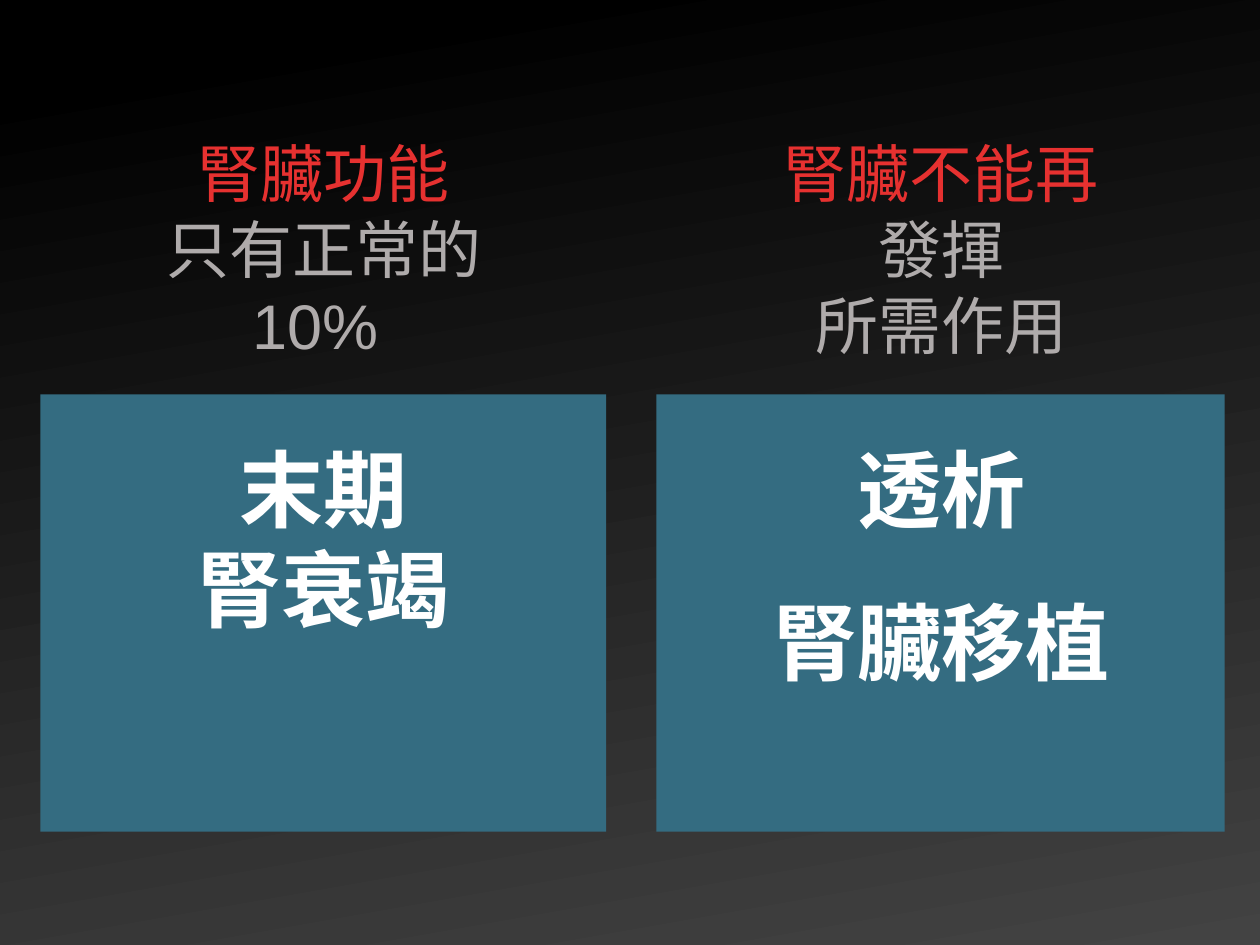
from pptx import Presentation
from pptx import util as u
from pptx.dml.color import RGBColor
from pptx.enum import shapes, text

FONT = "Arial"
RED, GREY, WHITE, TEAL = "E63130", "AFABAB", "FFFFFF", "346C81"


def color(value):
    return RGBColor.from_string(value)


def set_background(slide):
    fill = slide.background.fill
    fill.gradient()
    fill.gradient_angle = 280  # counter-clockwise, so 80 degrees clockwise
    for stop, position, shade in zip(fill.gradient_stops, (0.08, 1), ("000000", "434343")):
        stop.position = position
        stop.color.rgb = color(shade)


def add_panel(group, left, width):
    panel = group.shapes.add_shape(
        shapes.MSO_SHAPE.RECTANGLE,
        u.Inches(left), u.Inches(3.13), u.Inches(width), u.Inches(3.47))
    panel.shadow.inherit = False
    panel.fill.solid()
    panel.fill.fore_color.rgb = color(TEAL)
    panel.line.fill.background()


def add_text(group, box, content, size, run_colors, bold=False, anchor=text.MSO_ANCHOR.TOP):
    """Centred text; the last of run_colors also serves all later runs."""
    text_box = group.shapes.add_textbox(*(u.Inches(length) for length in box))
    frame = text_box.text_frame
    frame.word_wrap = True
    frame.auto_size = text.MSO_AUTO_SIZE.SHAPE_TO_FIT_TEXT
    frame.vertical_anchor = anchor
    frame.text = content
    for paragraph in frame.paragraphs:
        paragraph.alignment = text.PP_ALIGN.CENTER
        paragraph.font.size = u.Pt(size)
    runs = [run for paragraph in frame.paragraphs for run in paragraph.runs]
    for index, run in enumerate(runs):
        run.font.name = FONT
        run.font.size = u.Pt(size)
        run.font.bold = bold
        run.font.color.rgb = color(run_colors[min(index, len(run_colors) - 1)])
    return frame


def add_column(slide, panel, heading_box, heading, body_box, body, gap=0):
    group = slide.shapes.add_group_shape()
    add_panel(group, *panel)
    add_text(group, heading_box, heading, 36, (RED, GREY), anchor=text.MSO_ANCHOR.BOTTOM)
    frame = add_text(group, body_box, body, 48, (WHITE,), bold=True)
    frame.paragraphs[1].space_before = u.Pt(gap)


def main():
    presentation = Presentation()
    presentation.slide_width = u.Inches(10)
    presentation.slide_height = u.Inches(7.5)
    slide = presentation.slides.add_slide(presentation.slide_layouts[6])
    set_background(slide)

    # Left: the condition
    add_column(slide, (0.32, 4.49),
               (0.2, 1, 4.74, 1.92), "腎臟功能\v只有正常的\n10% ",
               (0.32, 3.42, 4.5, 1.72), "末期\n腎衰竭")
    # Right: the treatments
    add_column(slide, (5.21, 4.51),
               (5.33, 1, 4.28, 1.92), "腎臟不能再\v發揮\n所需作用",
               (5.22, 3.42, 4.5, 2.14), "透析\n腎臟移植", gap=30)

    presentation.save("out.pptx")


if __name__ == "__main__":
    main()
